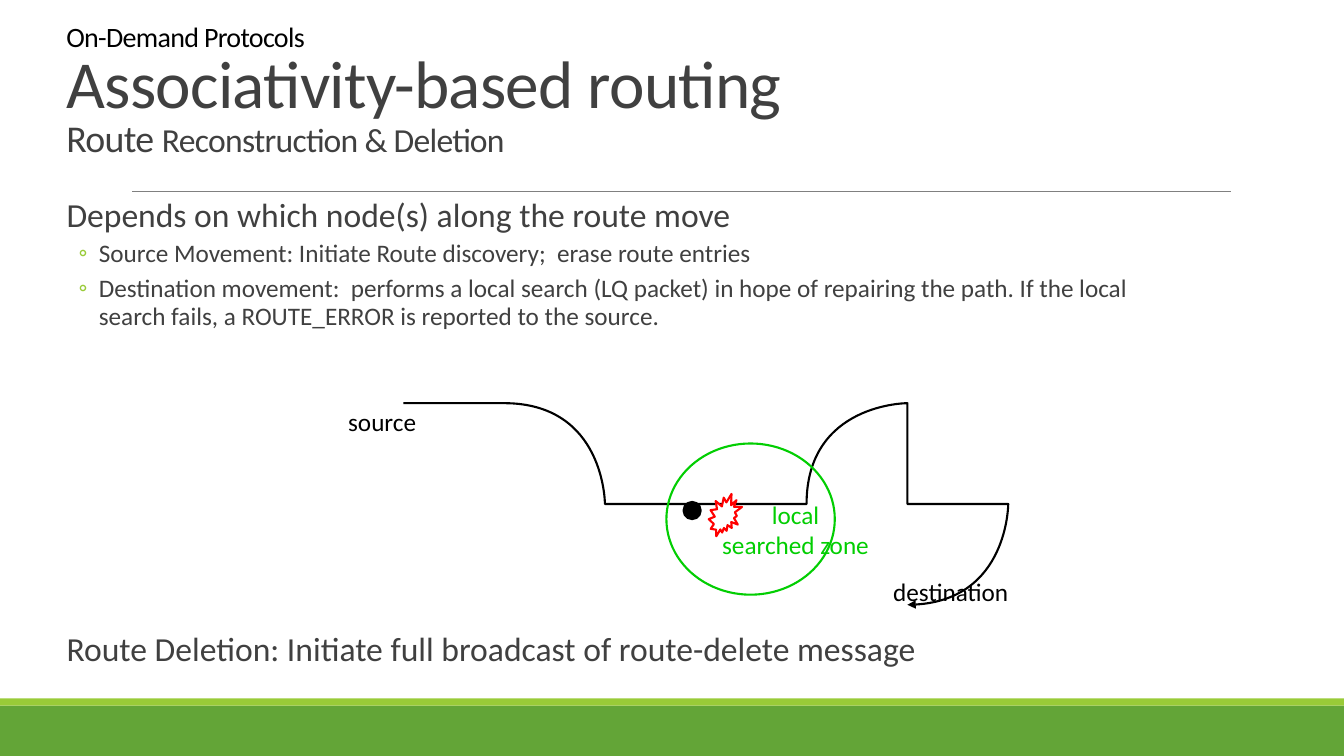
from lxml.etree import SubElement
from pptx import Presentation
from pptx.dml.color import RGBColor
from pptx.enum.shapes import MSO_CONNECTOR, MSO_SHAPE as Shape
from pptx.enum.text import MSO_ANCHOR, PP_ALIGN
from pptx.oxml.ns import qn
from pptx.util import Inches, Pt

FONT = "Calibri"
BLACK = RGBColor(0x00, 0x00, 0x00)
WHITE = RGBColor(0xFF, 0xFF, 0xFF)
TEXT_GREY = RGBColor(0x40, 0x40, 0x40)
RULE_GREY = RGBColor(0x80, 0x80, 0x80)
DARK_GREEN = RGBColor(0x63, 0xA5, 0x37)
LIME = RGBColor(0x99, 0xCB, 0x38)
ZONE_GREEN = RGBColor(0x02, 0xCE, 0x02)
RED = RGBColor(0xFF, 0x00, 0x00)

WIDTH, HEIGHT = 13.33, 7.5
MARGIN = 0.56
BODY_WIDTH = 10.89
FOOTER_TOP = 7.0
STRIPE = 0.07

deck = Presentation()
deck.slide_width, deck.slide_height = Inches(WIDTH), Inches(HEIGHT)
slide = deck.slides.add_slide(deck.slide_layouts[6])
shapes = slide.shapes


def add_figure(kind, box, fill=None, line=None):
    figure = shapes.add_shape(kind, *map(Inches, box))
    figure.shadow.inherit = False
    if fill is None:
        figure.fill.background()
    else:
        figure.fill.solid()
        figure.fill.fore_color.rgb = fill
    if line is None:
        figure.line.fill.background()
    else:
        figure.line.color.rgb = line
        figure.line.width = Pt(1.5)


def add_run(paragraph, text, size, color):
    run = paragraph.add_run()
    run.text = text
    run.font.name = FONT
    run.font.size = Pt(size)
    run.font.color.rgb = color
    return run


# Footer bands and title rule
add_figure(Shape.RECTANGLE, (0, FOOTER_TOP, WIDTH, HEIGHT - FOOTER_TOP), DARK_GREEN)
add_figure(Shape.RECTANGLE, (0, FOOTER_TOP - STRIPE, WIDTH, STRIPE), LIME)
title_rule = shapes.add_connector(
    MSO_CONNECTOR.STRAIGHT, Inches(1.31), Inches(1.9), Inches(12.21), Inches(1.9))
title_rule.line.color.rgb = RULE_GREY
title_rule.line.width = Pt(0.5)
SubElement(title_rule._element.spPr, qn("a:effectLst"))

# Title
title = shapes.add_textbox(*map(Inches, (MARGIN, 0.19, 11.5, 1.45))).text_frame
title.word_wrap = True
title.vertical_anchor = MSO_ANCHOR.BOTTOM
heading = title.paragraphs[0]
heading.line_spacing = 0.85
for text, size, color, ends_line in (
    ("On-Demand Protocols", 20, BLACK, True),
    ("Associativity-based routing", 48, TEXT_GREY, True),
    ("Route ", 27, TEXT_GREY, False),
    ("Reconstruction & Deletion", 24, TEXT_GREY, False),
):
    run = add_run(heading, text, size, color)
    run._r.get_or_add_rPr().set("spc", "-50")
    if ends_line:
        heading.add_line_break()

# Body: a lead line with its bullets above the drawing, one lead line below it
BODY_BLOCKS = (
    (1.92, 1.6, "Depends on which node(s) along the route move", (
        "Source Movement: Initiate Route discovery;  erase route entries",
        "Destination movement:  performs a local search (LQ packet) in hope of "
        "repairing the path. If the local search fails, a ROUTE_ERROR is "
        "reported to the source.",
    )),
    (6.23, 0.5, "Route Deletion: Initiate full broadcast of route-delete message", ()),
)
for top, height, lead_text, bullets in BODY_BLOCKS:
    body = shapes.add_textbox(*map(Inches, (MARGIN, top, BODY_WIDTH, height))).text_frame
    body.word_wrap = True
    body.margin_left = body.margin_right = 0
    lead = body.paragraphs[0]
    lead._p.get_or_add_pPr().set("marL", str(Inches(0.1)))
    lead.line_spacing = 0.9
    lead.space_after = Pt(2)
    add_run(lead, lead_text, 24, TEXT_GREY)
    for text in bullets:
        item = body.add_paragraph()
        item.line_spacing = 0.9
        item.space_before, item.space_after = Pt(2), Pt(4)
        properties = item._p.get_or_add_pPr()
        properties.set("marL", str(Inches(0.42)))
        properties.set("indent", str(Inches(-0.2)))
        bullet_color = SubElement(properties, qn("a:buClr"))
        SubElement(bullet_color, qn("a:srgbClr"), val=str(LIME))
        SubElement(properties, qn("a:buFont"), typeface=FONT)
        SubElement(properties, qn("a:buChar"), char="◦")
        add_run(item, text, 18, TEXT_GREY)

# Route: a start point, then two control points and an end point per curve
ROUTE = (
    (3.94, 4.32),
    (4.24, 4.4), (4.53, 4.48), (4.78, 4.48),
    (5.03, 4.48), (5.24, 4.26), (5.44, 4.32),
    (5.65, 4.37), (5.69, 4.69), (6.03, 4.82),
    (6.36, 4.94), (7.18, 5.11), (7.44, 5.07),
    (7.71, 5.03), (7.38, 4.69), (7.61, 4.57),
    (7.85, 4.44), (8.61, 4.32), (8.86, 4.32),
    (9.11, 4.32), (9, 4.41), (9.11, 4.57),
    (9.22, 4.72), (9.47, 5.03), (9.53, 5.23),
    (9.58, 5.44), (9.51, 5.63), (9.44, 5.82),
)
builder = shapes.build_freeform(*ROUTE[0], scale=Inches(1) / 1.0)
builder.add_line_segments(ROUTE[1:], close=False)
route = builder.convert_to_shape()
route.shadow.inherit = False
route.fill.background()
route.line.color.rgb = BLACK
route.line.width = Pt(1.5)
SubElement(route.line._get_or_add_ln(), qn("a:tailEnd"), type="triangle")

outline = next(route._element.iter(qn("a:path")))
steps = outline.findall(qn("a:lnTo"))
for first in range(0, len(steps), 3):
    curve = SubElement(outline, qn("a:cubicBezTo"))
    for step in steps[first:first + 3]:
        curve.append(step[0])
        outline.remove(step)

# Broken link, searched zone and the node that starts the search
add_figure(Shape.EXPLOSION2, (7.03, 4.9, 0.33, 0.42), WHITE, RED)
add_figure(Shape.OVAL, (6.61, 4.4, 1.67, 1.5), line=ZONE_GREEN)
add_figure(Shape.OVAL, (6.78, 4.98, 0.17, 0.17), BLACK, BLACK)

for box, lines, color in (
    ((7.05, 4.9, 1.68, 0.71), ("local", "searched zone"), ZONE_GREEN),
    ((3.35, 3.98, 0.88, 0.4), ("source",), BLACK),
    ((8.75, 5.67, 1.36, 0.4), ("destination",), BLACK),
):
    label = shapes.add_textbox(*map(Inches, box)).text_frame
    label.word_wrap = False
    for number, text in enumerate(lines):
        paragraph = label.add_paragraph() if number else label.paragraphs[0]
        paragraph.alignment = PP_ALIGN.CENTER
        add_run(paragraph, text, 18, color)

deck.save("out.pptx")
